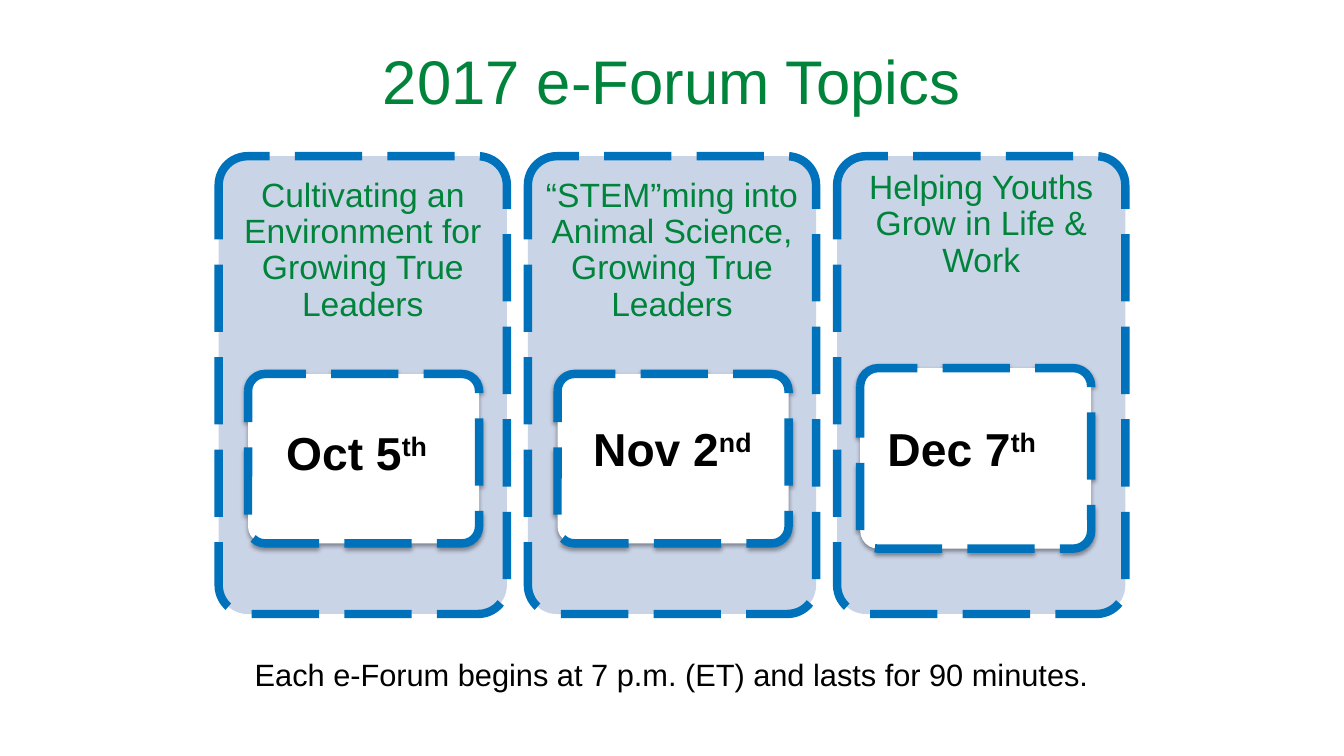
from dataclasses import dataclass

from lxml import etree
from pptx import Presentation
from pptx.dml.color import RGBColor
from pptx.enum import dml, shapes, text
from pptx.oxml import ns
from pptx.util import Pt


@dataclass(frozen=True)
class Theme:
    """Colours and type sizes of the slide."""
    font: str = "Arial"
    green: str = "00833B"
    blue: str = "0072BC"
    pale: str = "CAD4E7"
    white: str = "FFFFFF"
    black: str = "000000"
    title: float = 44
    topic: float = 24
    date: float = 33
    note: float = 22
    border: float = 6


@dataclass(frozen=True)
class Forum:
    """One e-Forum, with the placing of its date badge inside the card."""
    topic: str
    day: str
    suffix: str
    topic_drop: float
    badge: tuple
    date_shift: tuple


THEME = Theme()
FORUMS = [
    Forum("Cultivating an Environment for Growing True Leaders", "Oct 5", "th",
          18.5, (21, 155.5, 165, 121), (-5, -2.5)),
    Forum("“STEM”ming into Animal Science, Growing True Leaders", "Nov 2", "nd",
          18.5, (21.2, 155.5, 165, 121), (-0.5, -5)),
    Forum("Helping Youths Grow in Life & Work", "Dec 7", "th",
          0, (16.5, 151.3, 165, 129), (-10, -5)),
]


def add_text(slide, box, runs, size, color, spacing=1.0, inset=7.2,
             anchor=text.MSO_ANCHOR.MIDDLE):
    """Add a centred text box from (wording, bold, superscript) runs."""
    frame = slide.shapes.add_textbox(*map(Pt, box)).text_frame
    frame.word_wrap = True
    frame.vertical_anchor = anchor
    frame.margin_left = frame.margin_right = Pt(7.2)
    frame.margin_top = frame.margin_bottom = Pt(inset)
    paragraph = frame.paragraphs[0]
    paragraph.alignment = text.PP_ALIGN.CENTER
    paragraph.line_spacing = spacing
    for wording, bold, superscript in runs:
        run = paragraph.add_run()
        run.text = wording
        run.font.name = THEME.font
        run.font.size = Pt(size)
        run.font.bold = bold
        run.font.color.rgb = RGBColor.from_string(color)
        if superscript:
            run.font._element.set("baseline", "30000")


def add_panel(slide, box, fill):
    """Add a rounded panel with a long-dashed border."""
    shape = slide.shapes.add_shape(
        shapes.MSO_SHAPE.ROUNDED_RECTANGLE, *map(Pt, box))
    shape.adjustments[0] = 0.1
    shape.fill.solid()
    shape.fill.fore_color.rgb = RGBColor.from_string(fill)
    shape.line.color.rgb = RGBColor.from_string(THEME.blue)
    shape.line.width = Pt(THEME.border)
    shape.line.dash_style = dml.MSO_LINE.LONG_DASH
    shape.shadow.inherit = False
    return shape


def add_drop_shadow(shape):
    """Give a shape a soft shadow straight below it."""
    effects = shape._element.spPr.find(ns.qn("a:effectLst"))
    shadow = etree.SubElement(
        effects, ns.qn("a:outerShdw"), blurRad=str(Pt(3.1)),
        dist=str(Pt(1.6)), dir="5400000", rotWithShape="0")
    color = etree.SubElement(shadow, ns.qn("a:srgbClr"), val=THEME.black)
    etree.SubElement(color, ns.qn("a:alpha"), val="37000")


def add_title(slide, box):
    """Add the slide title."""
    add_text(slide, box, [("2017 e-Forum Topics", False, False)],
             THEME.title, THEME.green, inset=3.6)


def add_card(slide, box, forum):
    """Add a forum card with its topic and date badge."""
    left, top, width, height = box
    add_panel(slide, box, THEME.pale)
    add_text(slide, (left, top + forum.topic_drop, width, height * 0.3),
             [(forum.topic, False, False)], THEME.topic, THEME.green, 0.9)
    badge_left, badge_top, badge_width, badge_height = forum.badge
    badge = (left + badge_left, top + badge_top, badge_width, badge_height)
    add_drop_shadow(add_panel(slide, badge, THEME.white))
    shift_x, shift_y = forum.date_shift
    add_text(slide, (badge[0] + shift_x, badge[1] + shift_y, *badge[2:]),
             [(forum.day, True, False), (forum.suffix, True, True)],
             THEME.date, THEME.black, 0.9)


def add_cards(slide, box, gap):
    """Share the box equally among the forum cards."""
    left, top, width, height = box
    card_width = (width - gap * (len(FORUMS) - 1)) / len(FORUMS)
    for index, forum in enumerate(FORUMS):
        card_left = left + index * (card_width + gap)
        add_card(slide, (card_left, top, card_width, height), forum)


def add_note(slide, box):
    """Add the closing line about time and length."""
    wording = "Each e-Forum begins at 7 p.m. (ET) and lasts for 90 minutes."
    add_text(slide, box, [(wording, False, False)], THEME.note, THEME.black,
             anchor=text.MSO_ANCHOR.TOP)


def main():
    """Build and save the presentation."""
    presentation = Presentation()
    presentation.slide_width = Pt(960)
    presentation.slide_height = Pt(540)
    slide = presentation.slides.add_slide(presentation.slide_layouts[6])
    add_title(slide, (156, 12, 648, 90))
    add_cards(slide, (156.2, 111.6, 647.6, 327), 15)
    add_note(slide, (170.5, 461, 618.5, 24))
    presentation.save("out.pptx")


if __name__ == "__main__":
    main()
